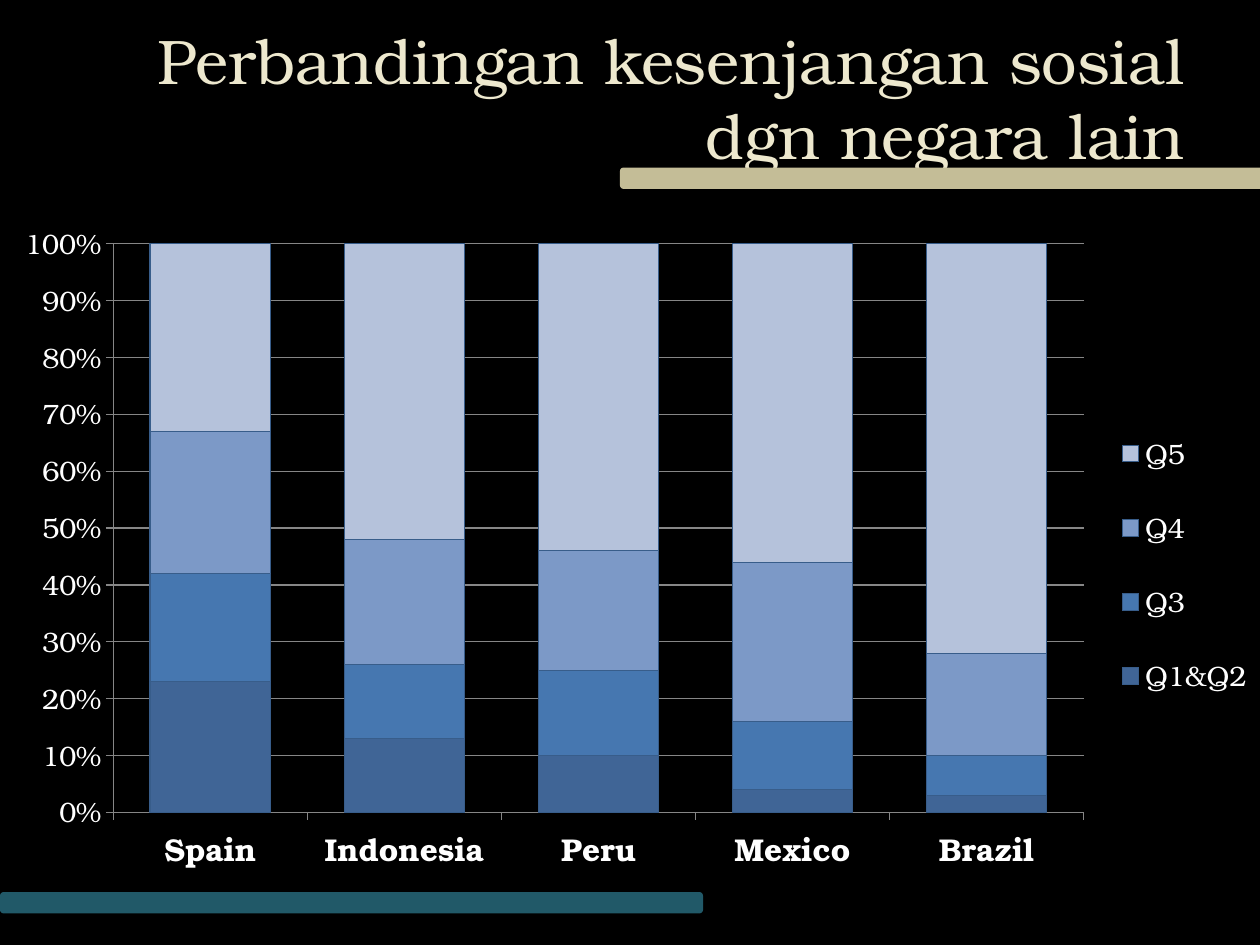
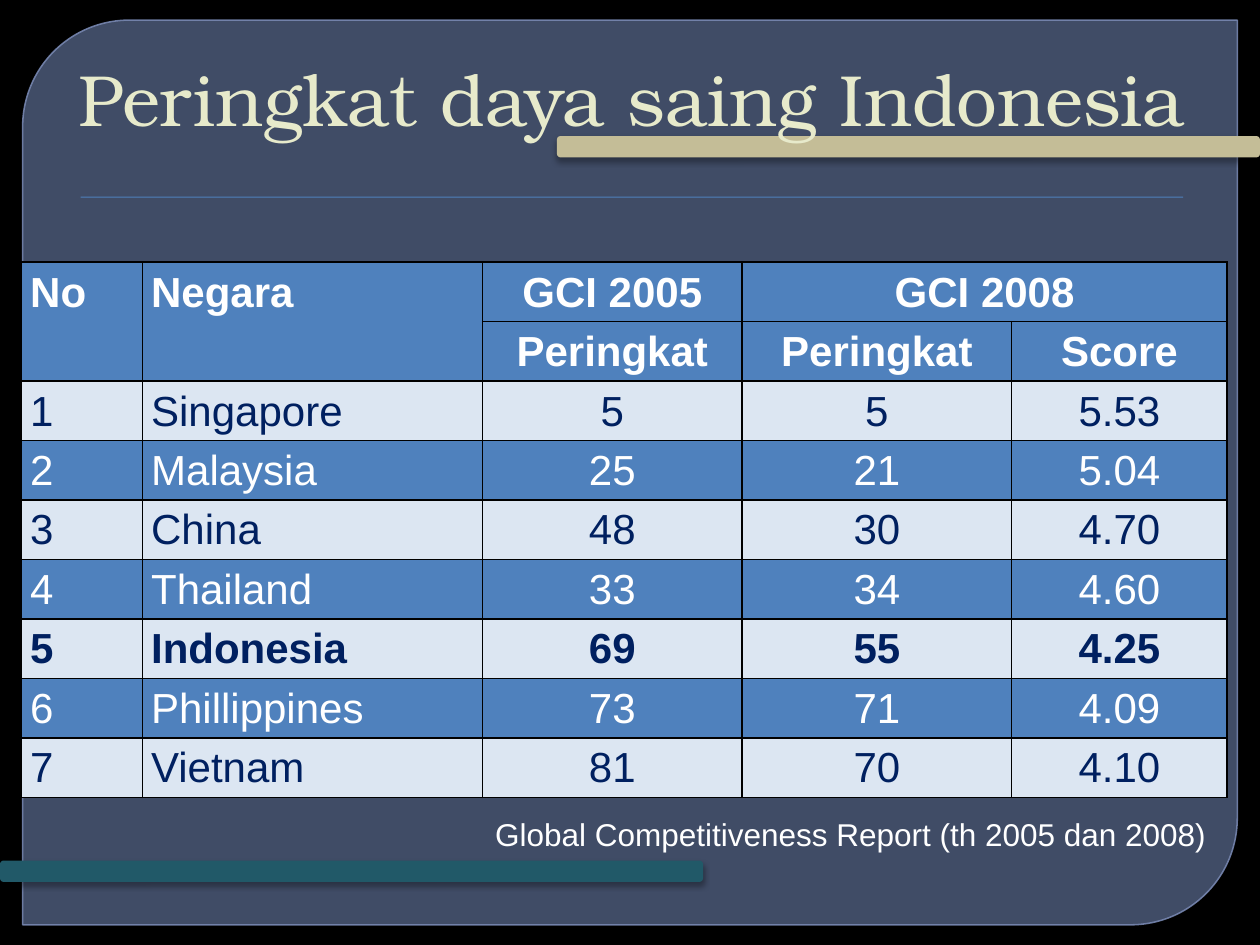
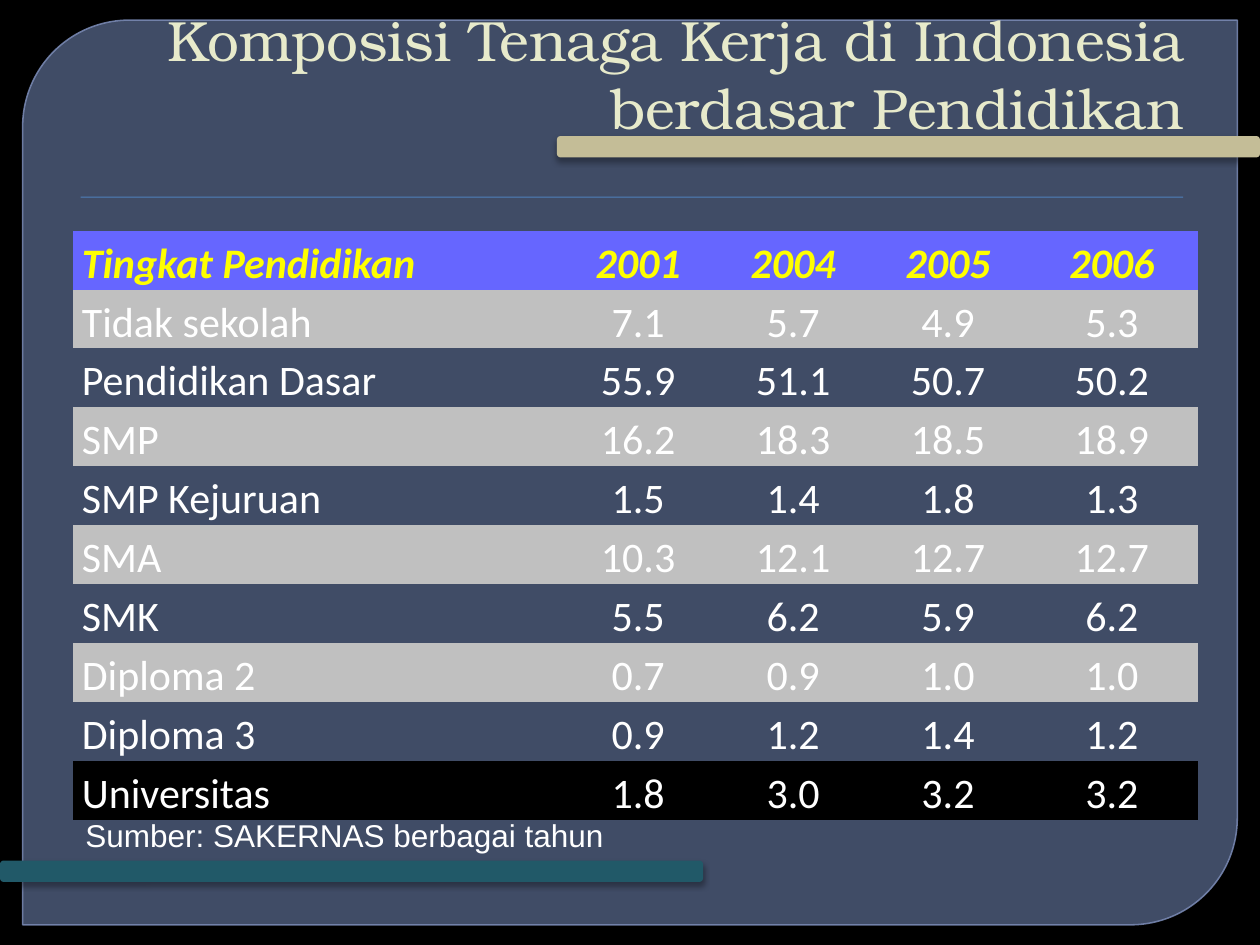
from dataclasses import dataclass
from lxml import etree
from pptx import Presentation
from pptx.chart.data import CategoryChartData as ChartData
from pptx.dml.color import RGBColor as Rgb
from pptx.enum.chart import XL_CHART_TYPE as Kind, XL_LEGEND_POSITION as Side, XL_TICK_MARK as Tick
from pptx.enum.shapes import MSO_SHAPE as Form
from pptx.enum.text import MSO_ANCHOR as Anchor, MSO_AUTO_SIZE as Fit, PP_ALIGN as Align
from pptx.oxml import parse_xml
from pptx.oxml.ns import nsdecls, qn
from pptx.util import Inches, Pt


@dataclass(frozen=True)
class Theme:
    back: str = "000000"
    white: str = "FFFFFF"
    panel: str = "63759D"
    edge: str = "7989B3"
    sand: str = "C4BD97"
    teal: str = "215968"
    blue: str = "4F81BD"
    pale: str = "DCE6F2"
    navy: str = "002060"
    cream: str = "EDE8CE"
    lime: str = "E7EACB"
    grid: str = "868686"
    rim: str = "385D8A"
    violet: str = "6666FF"
    yellow: str = "FFFF00"
    silver: str = "C0C0C0"
    serif: str = "TeX Gyre Bonum"
    sans: str = "Arial"
    text: str = "Calibri"
    cell: float = 24
    note: float = 18
    tick: float = 16


T = Theme()
NO_STYLE = "{2D5ABB26-0587-4C30-8999-92F81FD0307C}"

GAP = {
    "title": "Perbandingan kesenjangan sosial dgn negara lain",
    "lands": ["Spain", "Indonesia", "Peru", "Mexico", "Brazil"],
    "parts": [
        ("Q1&Q2", "406596", [23, 13, 10, 4, 3]),
        ("Q3", "4677B0", [19, 13, 15, 12, 7]),
        ("Q4", "7C99C7", [25, 22, 21, 28, 18]),
        ("Q5", "B5C2DB", [33, 52, 54, 56, 72]),
    ],
}

RANK = {
    "title": "Peringkat daya saing Indonesia",
    "rows": [
        ("No", "Negara", "GCI 2005", "GCI 2008", ""),
        ("", "", "Peringkat", "Peringkat", "Score"),
        ("1", "Singapore", "5", "5", "5.53"),
        ("2", "Malaysia", "25", "21", "5.04"),
        ("3", "China", "48", "30", "4.70"),
        ("4", "Thailand", "33", "34", "4.60"),
        ("5", "Indonesia", "69", "55", "4.25"),
        ("6", "Phillippines", "73", "71", "4.09"),
        ("7", "Vietnam", "81", "70", "4.10"),
    ],
    "cols": [0.96, 2.7, 2.06, 2.14, 1.71],
    "note": "Global Competitiveness Report (th 2005 dan 2008)",
}

WORK = {
    "title": "Komposisi Tenaga Kerja di Indonesia\vberdasar Pendidikan",
    "rows": [
        ("Tingkat Pendidikan", "2001", "2004", "2005", "2006"),
        ("Tidak sekolah", "7.1", "5.7", "4.9", "5.3"),
        ("Pendidikan Dasar", "55.9", "51.1", "50.7", "50.2"),
        ("SMP", "16.2", "18.3", "18.5", "18.9"),
        ("SMP Kejuruan", "1.5", "1.4", "1.8", "1.3"),
        ("SMA", "10.3", "12.1", "12.7", "12.7"),
        ("SMK", "5.5", "6.2", "5.9", "6.2"),
        ("Diploma 2", "0.7", "0.9", "1.0", "1.0"),
        ("Diploma 3", "0.9", "1.2", "1.4", "1.2"),
        ("Universitas", "1.8", "3.0", "3.2", "3.2"),
    ],
    "cols": [3.87, 1.23, 1.23, 1.23, 1.37],
    "note": "Sumber: SAKERNAS berbagai tahun",
}


def hue(code):
    return Rgb.from_string(code)


def style(font, name, size, color, bold=False, slant=False):
    font.name, font.size = name, Pt(size)
    font.bold, font.italic = bold, slant
    font.color.rgb = hue(color)


def fade(part, share):
    tone = part.find(".//" + qn("a:srgbClr"))
    etree.SubElement(tone, qn("a:alpha")).set("val", str(share * 1000))


def block(slide, form, box, color):
    shape = slide.shapes.add_shape(form, *map(Inches, box))
    shape.shadow.inherit = False
    shape.fill.solid()
    shape.fill.fore_color.rgb = hue(color)
    shape.line.fill.background()
    return shape


def shade(shape, share, blur, dist):
    glow = shape._element.spPr.find(qn("a:effectLst"))
    glow.append(parse_xml(
        f'<a:outerShdw {nsdecls("a")} blurRad="{Pt(blur)}" dist="{Pt(dist)}" '
        f'dir="5400000" rotWithShape="0"><a:srgbClr val="{T.back}">'
        f'<a:alpha val="{share * 1000}"/></a:srgbClr></a:outerShdw>'))


def bars(slide, left, top, base):
    for x, y, color in ((left, top, T.sand), (0, base, T.teal)):
        bar = block(slide, Form.ROUNDED_RECTANGLE, (x, y, 5.58, 0.17), color)
        shade(bar, 32, 3.5, 2.2)


def frame(slide):
    panel = block(slide, Form.ROUND_2_DIAG_RECTANGLE, (0.18, 0.16, 9.64, 7.18), T.panel)
    panel.adjustments[0] = 0.118
    panel.line.color.rgb = hue(T.edge)
    panel.line.width = Pt(0.87)
    props = panel._element.spPr
    fade(props.find(qn("a:solidFill")), 65)
    fade(props.find(qn("a:ln")), 88)
    bars(slide, 4.42, 1.08, 6.83)
    shade(block(slide, Form.RECTANGLE, (0.64, 1.56, 8.75, 0.01), T.blue), 75, 1, 1)


def start(deck, title, size, color, tall):
    slide = deck.slides.add_slide(deck.slide_layouts[5])
    slide.background.fill.solid()
    slide.background.fill.fore_color.rgb = hue(T.back)
    head = slide.shapes.title
    head.left, head.top, head.width, head.height = map(Inches, (0.5, 0.28, 9, tall))
    body = head.text_frame
    body.text = title
    body.word_wrap, body.auto_size = True, Fit.NONE
    body.vertical_anchor = Anchor.BOTTOM
    line = body.paragraphs[0]
    line.alignment = Align.RIGHT
    for run in line.runs:
        style(run.font, T.serif, size, color)
    return slide


def framed(deck, title, size):
    slide = start(deck, title, size, T.lime, 0.89)
    frame(slide)
    slide.shapes._spTree.append(slide.shapes.title._element)
    return slide


def note(slide, text, box, align):
    label = slide.shapes.add_textbox(*map(Inches, box)).text_frame
    label.word_wrap = True
    label.text = text
    line = label.paragraphs[0]
    line.alignment = align
    style(line.runs[0].font, T.sans, T.note, T.white)


def border(cell):
    props = cell._tc.get_or_add_tcPr()
    for spot, side in enumerate("LRTB"):
        props.insert(spot, parse_xml(
            f'<a:ln{side} {nsdecls("a")} w="{Pt(1)}"><a:solidFill>'
            f'<a:srgbClr val="{T.back}"/></a:solidFill></a:ln{side}>'))


def grid(slide, data, box, look):
    rows, cols = data["rows"], data["cols"]
    table = slide.shapes.add_table(len(rows), len(cols), *map(Inches, box)).table
    table.horz_banding = table.first_row = False
    table._tbl.tblPr.find(qn("a:tableStyleId")).text = NO_STYLE
    for col, wide in zip(table.columns, cols):
        col.width = Inches(wide)
    for r, row in enumerate(rows):
        for c, text in enumerate(row):
            cell = table.cell(r, c)
            cell.margin_left = cell.margin_right = Inches(0.07)
            cell.margin_top = cell.margin_bottom = 0
            fill, name, color, bold, slant, align = look(r, c)
            if fill:
                cell.fill.solid()
                cell.fill.fore_color.rgb = hue(fill)
            else:
                cell.fill.background()
            cell.text_frame.text = text
            line = cell.text_frame.paragraphs[0]
            line.alignment, line.line_spacing = align, 1.15
            for run in line.runs:
                style(run.font, name, T.cell, color, bold, slant)
    return table


def rank_look(r, c):
    dark = r < 2 or r % 2
    fill, color = (T.blue, T.white) if dark else (T.pale, T.navy)
    return fill, T.sans, color, r in (0, 1, 6), False, Align.LEFT if c < 2 else Align.CENTER


def work_look(r, c):
    head = r == 0
    fill = T.violet if head else T.back if r == 9 else T.silver if r % 2 else None
    align = Align.CENTER if c else Align.JUSTIFY
    return fill, T.text, T.yellow if head else T.white, head, head, align


def place(part, spot, box, inner=""):
    marks = "".join(f'<c:{k}Mode val="edge"/>' for k in "xy")
    sizes = "".join(f'<c:{k} val="{v}"/>' for k, v in zip("xywh", box))
    for old in part.findall(qn("c:layout")):
        part.remove(old)
    part.insert(spot, parse_xml(
        f'<c:layout {nsdecls("c")}><c:manualLayout>{inner}{marks}{sizes}'
        '</c:manualLayout></c:layout>'))


def gap_chart(slide):
    data = ChartData()
    data.categories = GAP["lands"]
    for name, _, vals in GAP["parts"]:
        data.add_series(name, vals)
    box = map(Inches, (0, 1.67, 10, 5.31))
    chart = slide.shapes.add_chart(Kind.COLUMN_STACKED_100, *box, data).chart
    chart.has_title = False
    style(chart.font, T.serif, 10, T.white)
    plot = chart.plots[0]
    plot.gap_width, plot.overlap, plot.vary_by_categories = 61, 100, False
    for part, (_, color, _) in zip(plot.series, GAP["parts"]):
        part.format.fill.solid()
        part.format.fill.fore_color.rgb = hue(color)
        part.format.line.color.rgb = hue(T.rim)
        part.format.line.width = Pt(0.75)
    across, up = chart.category_axis, chart.value_axis
    for axis, size, bold in ((across, T.note, True), (up, T.tick, False)):
        style(axis.tick_labels.font, T.serif, size, T.white, bold)
        axis.major_tick_mark = Tick.OUTSIDE
        axis.format.line.color.rgb = hue(T.grid)
    up.has_major_gridlines = True
    up.major_gridlines.format.line.color.rgb = hue(T.grid)
    up.major_unit = 0.1
    up.tick_labels.number_format = "0%"
    up.tick_labels.number_format_is_linked = False
    chart.has_legend = True
    key = chart.legend
    key.position, key.include_in_layout = Side.RIGHT, False
    style(key.font, T.serif, T.tick, T.white)
    area = chart._chartSpace.chart.plotArea
    place(area, 0, (0.09, 0.05, 0.77, 0.85), '<c:layoutTarget val="inner"/>')
    place(key._element, 1, (0.88, 0.28, 0.12, 0.5))


def gap_slide(deck):
    slide = start(deck, GAP["title"], 36, T.cream, 1.14)
    gap_chart(slide)
    bars(slide, 4.92, 1.33, 7.08)


def rank_slide(deck):
    slide = framed(deck, RANK["title"], 41.4)
    table = grid(slide, RANK, (0.17, 2.08, 9.58, 4.25), rank_look)
    for cell in table.iter_cells():
        border(cell)
    for c in (0, 1):
        table.cell(0, c).text_frame.paragraphs[0].space_before = Pt(6)
        table.cell(0, c).merge(table.cell(1, c))
    table.cell(0, 3).merge(table.cell(0, 4))
    note(slide, RANK["note"], (3.67, 6.42, 6, 0.4), Align.RIGHT)


def work_slide(deck):
    slide = framed(deck, WORK["title"], 32.4)
    grid(slide, WORK, (0.58, 1.83, 8.92, 4.4), work_look)
    note(slide, WORK["note"], (0.58, 6.43, 5.5, 0.4), Align.LEFT)


def main():
    deck = Presentation()
    deck.slide_width, deck.slide_height = Inches(10), Inches(7.5)
    for build in (gap_slide, rank_slide, work_slide):
        build(deck)
    deck.save("out.pptx")


if __name__ == "__main__":
    main()
